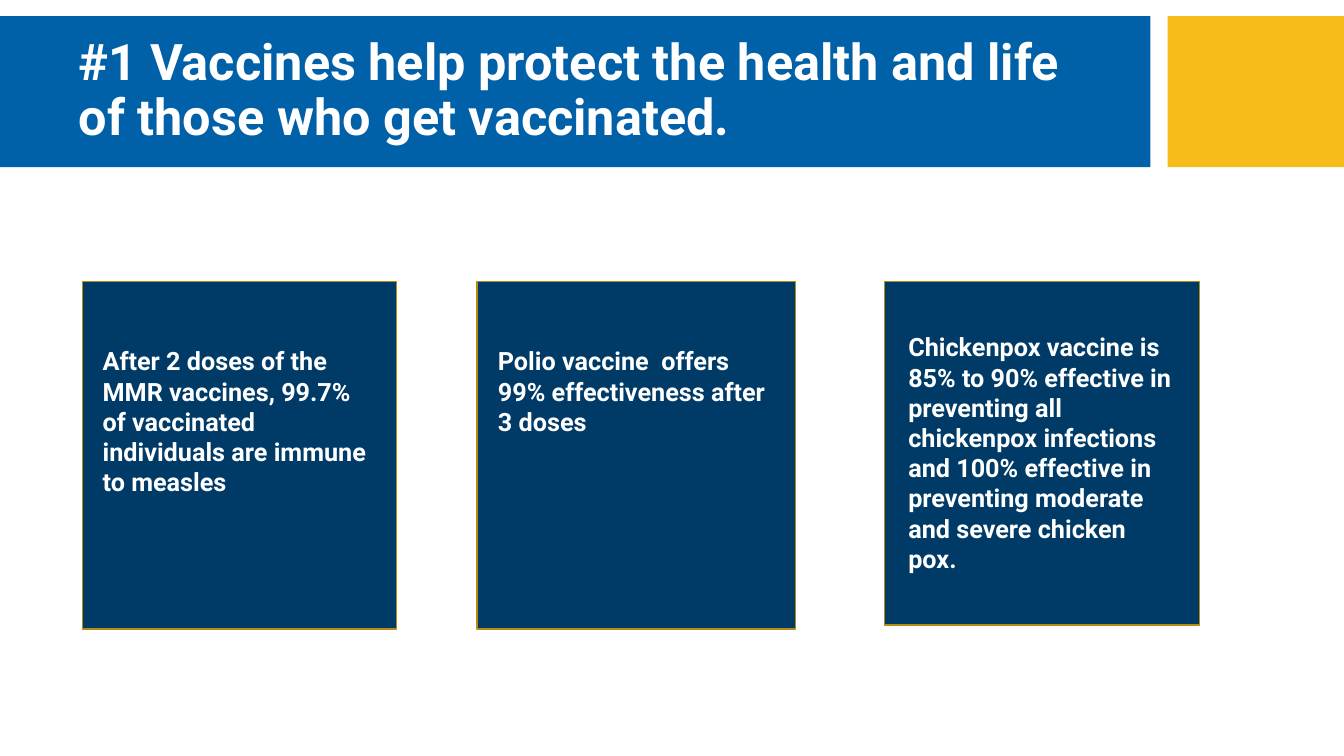
"""Build a slide on how vaccines protect those who get them."""
from pptx import Presentation
from pptx import util as u
from pptx.dml.color import RGBColor
from pptx.enum import shapes, text

PX = 9144
WHITE = RGBColor(0xFF, 0xFF, 0xFF)
BLUE = RGBColor(0x00, 0x60, 0xA8)
GOLD = RGBColor(0xF6, 0xBC, 0x1A)
NAVY = RGBColor(0x00, 0x3B, 0x68)
OCHRE = RGBColor(0xB6, 0x8B, 0x13)

TITLE = "#1 Vaccines help protect the health and life of those who get vaccinated."
CARDS = [
    ((82, 279, 311, 345), (92, 338, 293, 162),
     "After 2 doses of the MMR vaccines, 99.7% of vaccinated individuals "
     "are immune to measles"),
    ((473, 279, 316, 345), (484, 338, 294, 101),
     "Polio vaccine  offers 99% effectiveness after 3 doses"),
    ((877, 279, 313, 341), (891, 324, 281, 252),
     "Chickenpox vaccine is 85% to 90% effective in preventing all chickenpox "
     "infections and 100% effective in preventing moderate and severe chicken pox."),
]


def scale(box):
    """Turn a box in px into EMU."""
    return [u.Emu(n * PX) for n in box]


def add_rect(slide, box, fill, edge=None):
    """Add a filled rectangle, with an outline if an edge colour is given."""
    rect = slide.shapes.add_shape(shapes.MSO_SHAPE.RECTANGLE, *scale(box))
    rect.shadow.inherit = False
    rect.fill.solid()
    rect.fill.fore_color.rgb = fill
    if edge is None:
        rect.line.fill.background()
    else:
        rect.line.color.rgb = edge
        rect.line.width = u.Pt(1)


def set_text(frame, words, size, **form):
    """Write bold white words into a text frame."""
    for name, value in {"word_wrap": True, **form}.items():
        setattr(frame, name, value)
    para = frame.paragraphs[0]
    para.alignment = text.PP_ALIGN.LEFT
    run = para.add_run()
    run.text = words
    for name, value in {"name": "Roboto", "size": u.Pt(size), "bold": True}.items():
        setattr(run.font, name, value)
    run.font.color.rgb = WHITE
    return para


def add_title(slide, box, words):
    """Place the title in front of the header bands."""
    title = slide.shapes.title
    title.left, title.top, title.width, title.height = scale(box)
    para = set_text(title.text_frame, words, 36,
                    vertical_anchor=text.MSO_ANCHOR.MIDDLE,
                    auto_size=text.MSO_AUTO_SIZE.NONE)
    para.line_spacing = 0.9
    slide.shapes._spTree.append(title._element)


def add_note(slide, box, words):
    """Add the text of one card."""
    note = slide.shapes.add_textbox(*scale(box))
    set_text(note.text_frame, words, 18,
             auto_size=text.MSO_AUTO_SIZE.SHAPE_TO_FIT_TEXT)


def main():
    """Build and save the slide."""
    deck = Presentation()
    deck.slide_width, deck.slide_height = scale((1333, 750))
    slide = deck.slides.add_slide(deck.slide_layouts.get_by_name("Title Only"))
    add_rect(slide, (0, 16, 1141, 150), BLUE)
    add_rect(slide, (1158, 16, 175, 150), GOLD)
    add_title(slide, (68, 32, 1051, 118), TITLE)
    for card, note, words in CARDS:
        add_rect(slide, card, NAVY, OCHRE)
        add_note(slide, note, words)
    deck.save("out.pptx")


if __name__ == "__main__":
    main()
